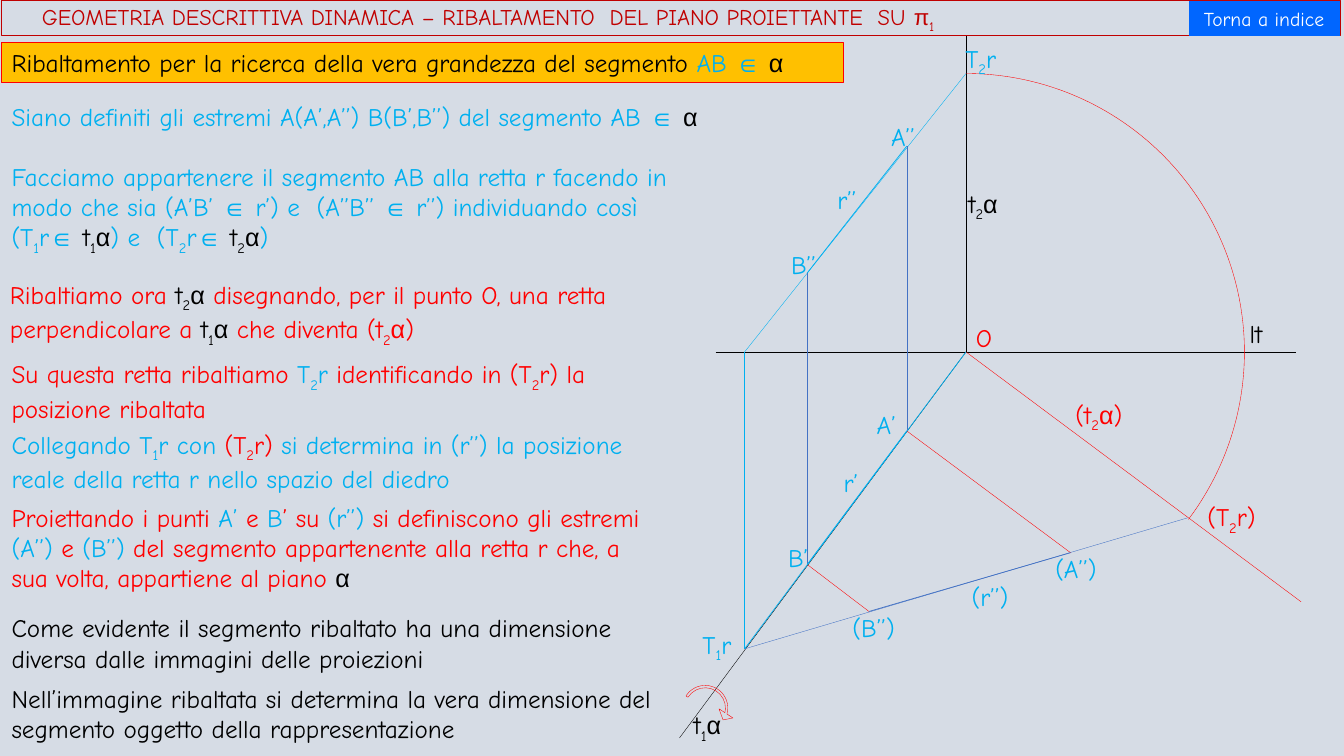
import itertools

import lxml.etree
import pptx
import pptx.dml.color
import pptx.enum.shapes
import pptx.enum.text
import pptx.oxml.ns
import pptx.util

RGBColor = pptx.dml.color.RGBColor
BLACK = RGBColor(0x00, 0x00, 0x00)
WHITE = RGBColor(0xFF, 0xFF, 0xFF)
RED = RGBColor(0xFF, 0x00, 0x00)
DARK_RED = RGBColor(0xC0, 0x00, 0x00)
CYAN = RGBColor(0x00, 0xB0, 0xF0)
BLUE = RGBColor(0x44, 0x72, 0xC4)
BUTTON_BLUE = RGBColor(0x00, 0x66, 0xFF)
AMBER = RGBColor(0xFF, 0xC0, 0x00)
PALE_BLUE = RGBColor(0xD6, 0xDC, 0xE5)

SUBSCRIPTS = {"₁": "1", "₂": "2"}
SYMBOLS = "απ∈"
THIN = pptx.util.Pt(0.25)
THICK = pptx.util.Pt(0.5)
ShapeKind = pptx.enum.shapes.MSO_SHAPE

presentation = pptx.Presentation()
presentation.slide_width = pptx.util.Inches(13.333)
presentation.slide_height = pptx.util.Inches(7.5)
UNIT = presentation.slide_width / 160  # square grid, 160 columns by 90 rows

slide = presentation.slides.add_slide(presentation.slide_layouts[5])
slide.background.fill.solid()
slide.background.fill.fore_color.rgb = PALE_BLUE


def grid(*lengths):
    """Turn grid columns and rows into slide lengths."""
    return [pptx.util.Emu(round(length * UNIT)) for length in lengths]


def write_text(shape, pieces, size=18):
    """Write (colour, text) pieces, with subscripts and symbols in runs of their own."""
    frame = shape.text_frame
    frame.word_wrap = True
    paragraph = frame.paragraphs[0]
    paragraph.alignment = pptx.enum.text.PP_ALIGN.LEFT
    for colour, text in pieces:
        for kind, letters in itertools.groupby(
                text, lambda letter: (letter in SUBSCRIPTS, letter in SYMBOLS)):
            is_subscript, is_symbol = kind
            run = paragraph.add_run()
            run.text = "".join(SUBSCRIPTS.get(letter, letter) for letter in letters)
            run.font.size = pptx.util.Pt(size)
            run.font.name = "Arial" if is_symbol else "Comic Neue"
            run.font.color.rgb = colour
            if is_subscript:
                run.font._element.set("baseline", "-25000")


# Title bar, index button and heading
title = slide.shapes.title
title.left, title.top, title.width, title.height = grid(0.2, 0, 159.4, 4.2)
title.line.color.rgb = DARK_RED
title.line.width = THIN
write_text(title, [(DARK_RED, "GEOMETRIA DESCRITTIVA DINAMICA – RIBALTAMENTO  "
                              "DEL PIANO PROIETTANTE  SU π₁")], 16)
title.text_frame.auto_size = pptx.enum.text.MSO_AUTO_SIZE.NONE
title.text_frame.vertical_anchor = pptx.enum.text.MSO_ANCHOR.MIDDLE
title.text_frame.margin_left = pptx.util.Inches(0.4)
title.text_frame.paragraphs[0].line_spacing = 0.9

button = slide.shapes.add_shape(ShapeKind.ACTION_BUTTON_CUSTOM, *grid(141.5, 0.1, 18, 4.2))
button.shadow.inherit = False
button.fill.solid()
button.fill.fore_color.rgb = BUTTON_BLUE
button.line.fill.background()
write_text(button, [(WHITE, "Torna a indice")], 14)
button.text_frame.vertical_anchor = pptx.enum.text.MSO_ANCHOR.MIDDLE
button.text_frame.paragraphs[0].alignment = pptx.enum.text.PP_ALIGN.CENTER

heading = slide.shapes.add_shape(ShapeKind.RECTANGLE, *grid(0.2, 5.05, 100.2, 4.8))
heading.shadow.inherit = False
heading.fill.solid()
heading.fill.fore_color.rgb = AMBER
heading.line.color.rgb = RED
heading.line.width = THIN
write_text(heading, [
    (BLACK, "Ribaltamento per la ricerca della vera grandezza del segmento "),
    (CYAN, "AB ∈ "), (BLACK, "α")])

# Points of the construction, as column and row
O = (115, 41.9)
T1R, T1R_ON_LT = (88.65, 77.25), (88.65, 41.9)
T2R, T2R_TURNED = (115, 8.75), (141.4, 61.65)
A1, A2, A_TURNED = (107.95, 51.3), (107.95, 17.4), (127.45, 65.8)
B1, B2, B_TURNED = (96.1, 67.2), (96.1, 32.5), (103.45, 72.8)

for start, end, colour, width in [
    ((85.2, O[1]), (154.3, O[1]), BLACK, THIN),
    ((O[0], 4.3), O, BLACK, THIN),
    (O, (80.9, 87.85), BLACK, THIN),
    (O, (154.9, 71.65), RED, THIN),
    (T1R_ON_LT, T1R, CYAN, THIN),
    (T1R_ON_LT, T2R, CYAN, THIN),
    (T1R, T2R_TURNED, BLUE, THIN),
    (A2, A1, BLUE, THIN),
    (B2, B1, BLUE, THIN),
    (A1, A_TURNED, RED, THIN),
    (B1, B_TURNED, RED, THIN),
    (A1, B1, CYAN, THICK),
    (A2, B2, CYAN, THICK),
    (B_TURNED, A_TURNED, BLUE, THICK),
    (T1R, O, CYAN, THICK),
]:
    connector = slide.shapes.add_connector(
        pptx.enum.shapes.MSO_CONNECTOR.STRAIGHT, *grid(*start, *end))
    connector.line.color.rgb = colour
    connector.line.width = width
    lxml.etree.SubElement(connector._element.spPr, pptx.oxml.ns.qn("a:effectLst"))

# Arc of rotation around O, and the arrow turning around t₁α
radius = O[1] - T2R[1]
for kind, box, adjustments, rotation in [
    (ShapeKind.ARC, (O[0] - radius, O[1] - radius, 2 * radius, 2 * radius),
     [162, 22.18], 0),
    (ShapeKind.CIRCULAR_ARROW, (80.4, 80.75, 7.1, 7.1),
     [0.04, 11.42, 205.2, 108, 0.14], 32.3),
]:
    curve = slide.shapes.add_shape(kind, *grid(*box))
    curve.shadow.inherit = False
    curve.fill.background()
    curve.line.color.rgb = RED
    curve.line.width = THIN
    curve.rotation = rotation
    for index, adjustment in enumerate(adjustments):
        curve.adjustments[index] = adjustment

labels = [
    (81.4, 83.9, 7, BLACK, "t₁α"),
    (114.1, 21.85, 7, BLACK, "t₂α"),
    (147.6, 37.3, 7, BLACK, "lt"),
    (82.45, 74.3, 7.7, CYAN, "T₁r"),
    (113.75, 4.55, 7.7, CYAN, "T₂r"),
    (142.55, 59.15, 9.5, RED, "(T₂r)"),
    (126.85, 46.9, 9.5, RED, "(t₂α)"),
    (114.5, 68.65, 8.4, CYAN, "(r’’)"),
    (98.5, 21.35, 7, CYAN, "r’’"),
    (99.25, 55.1, 7, CYAN, "r’"),
    (104.9, 13.8, 7, CYAN, "A’’"),
    (103.2, 48.1, 7, CYAN, "A’"),
    (124.45, 65.3, 8, CYAN, "(A’’)"),
    (115, 37.8, 7, RED, "O"),
    (93, 29.05, 7, CYAN, "B’’"),
    (92.65, 63.95, 7, CYAN, "B’"),
    (100.3, 72.35, 8, CYAN, "(B’’)"),
]
explanations = [
    ((0.2, 11.5, 100, 4.8), [
        (CYAN, "Siano definiti gli estremi A(A’,A’’) B(B’,B’’) del segmento AB ∈"),
        (BLACK, " α")]),
    ((0.2, 18.6, 82, 12.1), [
        (CYAN, "Facciamo appartenere il segmento AB alla retta r facendo in modo che sia "
               "(A’B’ ∈ r’) e  (A’’B’’ ∈ r’’) individuando così (T₁r∈ "),
        (BLACK, "t₁α"), (CYAN, ") e  (T₂r∈ "), (BLACK, "t₂α"), (CYAN, ")")]),
    ((0, 32.65, 80.6, 8.5), [
        (RED, "Ribaltiamo ora "), (BLACK, "t₂α"),
        (RED, " disegnando, per il punto O, una retta perpendicolare a "),
        (BLACK, "t₁α"), (RED, " che diventa (t₂α)")]),
    ((0.2, 42.1, 78.8, 8.5), [
        (RED, "Su questa retta ribaltiamo "), (CYAN, "T₂r"),
        (RED, " identificando in (T₂r) la posizione ribaltata")]),
    ((0.2, 50.5, 78.6, 8.5), [
        (CYAN, "Collegando T₁r con "), (RED, "(T₂r) "),
        (CYAN, "si determina in (r’’) la posizione reale della retta r "
               "nello spazio del diedro")]),
    ((0.2, 59.15, 79, 12.1), [
        (RED, "Proiettando i punti "), (CYAN, "A’"), (RED, " e "), (CYAN, "B"),
        (RED, "’ su "), (CYAN, "(r’’) "), (RED, "si definiscono gli estremi "),
        (CYAN, "(A’’) "), (RED, "e "), (CYAN, "(B’’) "),
        (RED, "del segmento appartenente alla retta r che, a sua volta, "
              "appartiene al piano "),
        (BLACK, "α")]),
    ((0.2, 72.35, 73.9, 8.5), [
        (BLACK, "Come evidente il segmento ribaltato ha una dimensione diversa "
                "dalle immagini delle proiezioni")]),
    ((0.2, 80.75, 79.8, 8.5), [
        (BLACK, "Nell’immagine ribaltata si determina la vera dimensione del segmento "
                "oggetto della rappresentazione")]),
]
label_boxes = [((left, top, width, 4.8), [(colour, text)])
               for left, top, width, colour, text in labels]
for box, pieces in label_boxes + explanations:
    text_box = slide.shapes.add_textbox(*grid(*box))
    write_text(text_box, pieces)
    text_box.text_frame.auto_size = pptx.enum.text.MSO_AUTO_SIZE.SHAPE_TO_FIT_TEXT

presentation.save("out.pptx")
